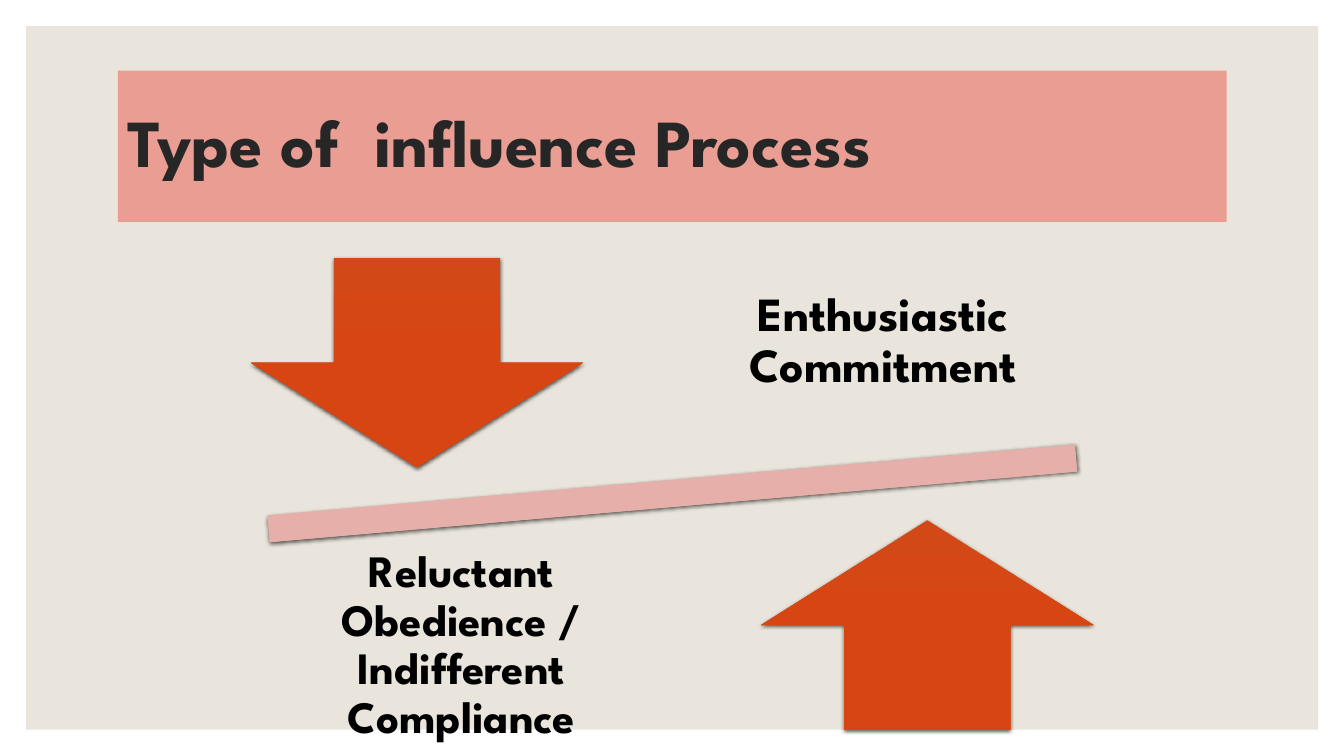
"""Build a slide that weighs two outcomes of an influence process on a tilted bar."""
from dataclasses import dataclass

from lxml import etree
from pptx import Presentation
from pptx import util as u
from pptx.dml.color import RGBColor
from pptx.enum import shapes, text

FONT = "League Spartan"
COLOURS = {
    "panel": "E9E5DC", "banner": "E99D93", "title": "262626", "label": "000000",
    "shadow": "000000",
}
GRADIENTS = {
    "bar": ("E6B1AC", "E6AFA9", "E5AEA9"),
    "arrow": ("D34817", "D74512", "D64512"),
}
DRAWING = "http://schemas.openxmlformats.org/drawingml/2006/main"


@dataclass(frozen=True)
class Frame:
    """Position and size in centimetres."""
    left: float
    top: float
    width: float
    height: float

    def lengths(self) -> tuple:
        """Return the four values as slide lengths."""
        return tuple(u.Cm(value) for value in (self.left, self.top, self.width, self.height))


@dataclass(frozen=True)
class Figure:
    """A shaded preset shape."""
    kind: shapes.MSO_SHAPE
    frame: Frame
    gradient: str
    rotation: float = 0


@dataclass(frozen=True)
class Label:
    """A centred caption."""
    words: str
    frame: Frame
    size: int
    inset: float


FIGURES = (
    Figure(shapes.MSO_SHAPE.MATH_MINUS, Frame(3.05, 11, 27.79, 2.87), "bar", 355),
    Figure(shapes.MSO_SHAPE.DOWN_ARROW, Frame(6.32, 6.5, 8.38, 5.28), "arrow"),
    Figure(shapes.MSO_SHAPE.UP_ARROW, Frame(19.18, 13.11, 8.38, 5.28), "arrow"),
)
LABELS = (
    Label("Enthusiastic Commitment", Frame(17.78, 5.84, 8.94, 5.54), 34, 0.66),
    Label("Reluctant Obedience / Indifferent Compliance",
          Frame(7.16, 13.51, 8.94, 5.54), 32, 0.64),
)


def write(box, words: str, size: int, colour: str, align: text.PP_ALIGN) -> None:
    """Put one bold, vertically centred paragraph into a box."""
    frame = box.text_frame
    frame.word_wrap = True
    frame.auto_size = text.MSO_AUTO_SIZE.NONE
    frame.vertical_anchor = text.MSO_ANCHOR.MIDDLE
    para = frame.paragraphs[0]
    para.alignment = align
    para.line_spacing = 0.9
    span = para.add_run()
    span.text = words
    span.font.name = FONT
    span.font.size = u.Pt(size)
    span.font.bold = True
    span.font.color.rgb = RGBColor.from_string(COLOURS[colour])


def paint(shape, colour: str) -> None:
    """Give a shape a plain fill."""
    shape.fill.solid()
    shape.fill.fore_color.rgb = RGBColor.from_string(COLOURS[colour])


def add_panel(page, frame: Frame):
    """Draw the backdrop behind everything else."""
    panel = page.shapes.add_shape(shapes.MSO_SHAPE.RECTANGLE, *frame.lengths())
    panel.shadow.inherit = False
    paint(panel, "panel")
    panel.line.fill.background()
    return panel


def add_title(page, panel, words: str, frame: Frame) -> None:
    """Place the title banner in front of the panel."""
    title = page.shapes.title
    panel._element.addnext(title._element)
    title.left, title.top, title.width, title.height = frame.lengths()
    paint(title, "banner")
    write(title, words, 48, "title", text.PP_ALIGN.LEFT)


def add_figure(page, figure: Figure) -> None:
    """Draw a shape with a vertical gradient and a soft shadow."""
    shape = page.shapes.add_shape(figure.kind, *figure.frame.lengths())
    shape.rotation = figure.rotation
    stops = "".join(
        f'<a:gs pos="{step * 50000}"><a:srgbClr val="{colour}"/></a:gs>'
        for step, colour in enumerate(GRADIENTS[figure.gradient])
    )
    styling = etree.fromstring(
        f'<a:spPr xmlns:a="{DRAWING}">'
        f'<a:gradFill rotWithShape="1"><a:gsLst>{stops}</a:gsLst>'
        '<a:lin ang="5400000" scaled="0"/></a:gradFill><a:ln><a:noFill/></a:ln>'
        '<a:effectLst><a:outerShdw blurRad="38100" dist="12700" dir="5400000" '
        f'rotWithShape="0"><a:srgbClr val="{COLOURS["shadow"]}"><a:alpha val="63000"/>'
        '</a:srgbClr></a:outerShdw></a:effectLst></a:spPr>'
    )
    shape._element.spPr.extend(list(styling))


def add_label(page, label: Label) -> None:
    """Add a caption with equal insets on all sides."""
    box = page.shapes.add_textbox(*label.frame.lengths())
    frame = box.text_frame
    frame.margin_left = frame.margin_right = u.Cm(label.inset)
    frame.margin_top = frame.margin_bottom = u.Cm(label.inset)
    write(box, label.words, label.size, "label", text.PP_ALIGN.CENTER)


def main() -> None:
    """Assemble and save the deck."""
    deck = Presentation()
    deck.slide_width, deck.slide_height = u.Cm(33.87), u.Cm(19.05)
    page = deck.slides.add_slide(deck.slide_layouts.get_by_name("Title Only"))
    panel = add_panel(page, Frame(0.66, 0.66, 32.56, 17.73))
    add_title(page, panel, "Type of  influence Process", Frame(2.97, 1.78, 27.94, 3.81))
    for figure in FIGURES:
        add_figure(page, figure)
    for label in LABELS:
        add_label(page, label)
    deck.save("out.pptx")


if __name__ == "__main__":
    main()
